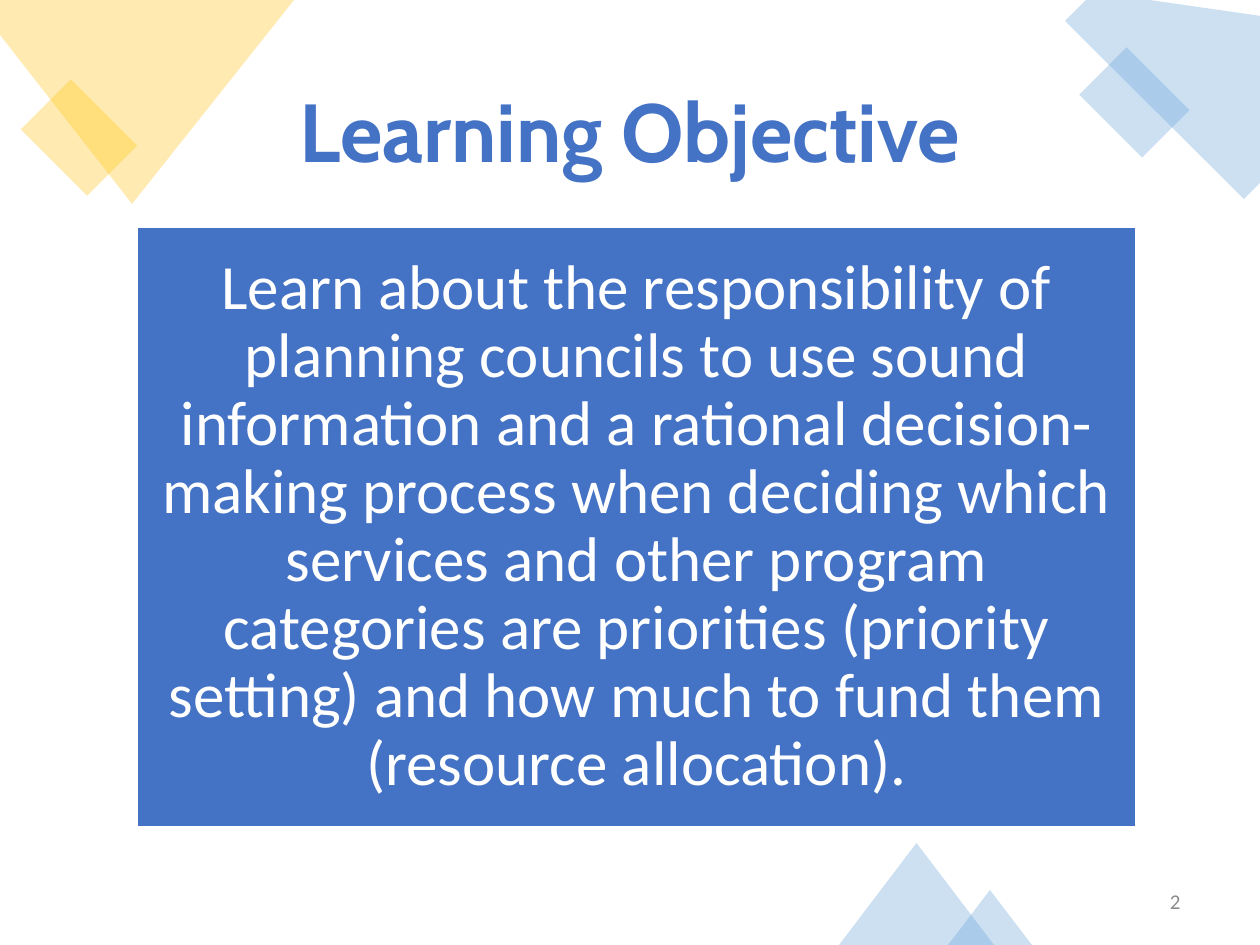
from dataclasses import dataclass

from lxml.etree import SubElement
from pptx import Presentation
from pptx.dml.color import RGBColor
from pptx.enum.shapes import MSO_SHAPE as Shape
from pptx.enum.text import MSO_ANCHOR as Anchor, PP_ALIGN as Align
from pptx.oxml.ns import qn
from pptx.util import Emu, Pt

PX = 914400 / 126


def px(n):
    return Emu(round(n * PX))


@dataclass(frozen=True)
class Theme:
    gold: str = "FFC000"
    sky: str = "5B9BD5"
    blue: str = "4472C4"
    white: str = "FFFFFF"
    grey: str = "8C8C8C"
    head_font: str = "Cabin"
    body_font: str = "Calibri"
    title_size: int = 47
    body_size: int = 36
    number_size: int = 12
    decor_alpha: int = 30


class Deck:
    def __init__(self, theme, width, height):
        self.theme = theme
        self.prs = Presentation()
        self.prs.slide_width, self.prs.slide_height = px(width), px(height)
        self.s = self.prs.slides.add_slide(self.prs.slide_layouts[6])

    def paint(self, sp, color, alpha=100):
        sp.shadow.inherit = False
        sp.fill.solid()
        sp.fill.fore_color.rgb = RGBColor.from_string(color)
        sp.line.fill.background()
        if alpha < 100:
            clr = sp._element.spPr.find(qn("a:solidFill"))[0]
            SubElement(clr, qn("a:alpha"), val=str(alpha * 1000))

    def decor(self, kind, box, color, rotation=0):
        sp = self.s.shapes.add_shape(kind, *map(px, box))
        sp.rotation = rotation
        self.paint(sp, color, self.theme.decor_alpha)

    def polygon(self, points, color):
        fb = self.s.shapes.build_freeform(*points[0], scale=PX)
        fb.add_line_segments(points[1:], close=True)
        self.paint(fb.convert_to_shape(), color, self.theme.decor_alpha)

    def set_text(self, sp, text, color, align, spacing=1.0, inset=None, **font):
        tf = sp.text_frame
        frame = {"word_wrap": True, "vertical_anchor": Anchor.MIDDLE}
        if inset is not None:
            for side in ("left", "right", "top", "bottom"):
                frame[f"margin_{side}"] = px(inset)
        p = tf.paragraphs[0]
        r = p.add_run()
        r.text = text
        r.font.color.rgb = RGBColor.from_string(color)
        formats = (
            (tf, frame),
            (p, {"alignment": align, "line_spacing": spacing}),
            (r.font, font),
        )
        for target, values in formats:
            for name, value in values.items():
                setattr(target, name, value)

    def text(self, box, text, color, align, **style):
        sp = self.s.shapes.add_textbox(*map(px, box))
        self.set_text(sp, text, color, align, **style)

    def panel(self, box, text, fill, color, **style):
        sp = self.s.shapes.add_shape(Shape.RECTANGLE, *map(px, box))
        self.paint(sp, fill)
        sp.line.color.rgb = RGBColor.from_string(color)
        sp.line.width = Pt(1)
        self.set_text(sp, text, color, Align.CENTER, **style)


def main():
    t = Theme()
    deck = Deck(t, 1260, 945)

    deck.decor(Shape.RECTANGLE, (32, 102, 94, 71), t.gold, 45)
    deck.polygon([(0, 0), (294, 0), (132, 204), (0, 35)], t.gold)
    deck.polygon([(1094, -8), (1261, 16), (1283, 160), (1244, 199), (1065, 21)], t.sky)
    deck.decor(Shape.RECTANGLE, (1090, 69, 89, 67), t.sky, 45)
    deck.text((910, 876, 283, 50), "2", t.grey, Align.RIGHT,
              name=t.body_font, size=Pt(t.number_size))
    for box in ((839, 843, 155, 102), (948, 890, 84, 55)):
        deck.decor(Shape.ISOSCELES_TRIANGLE, box, t.sky)

    deck.text((40, 44, 1180, 183), "Learning Objective", t.blue, Align.CENTER,
              spacing=0.9, name=t.head_font, size=Pt(t.title_size), bold=True)
    deck.panel(
        (137, 227, 999, 600),
        "Learn about the responsibility of planning councils to use sound "
        "information and a rational decision-making process when deciding which "
        "services and other program categories are priorities (priority setting) "
        "and how much to fund them (resource allocation).",
        t.blue, t.white, spacing=0.9, inset=19,
        name=t.body_font, size=Pt(t.body_size))

    deck.prs.save("out.pptx")


if __name__ == "__main__":
    main()
